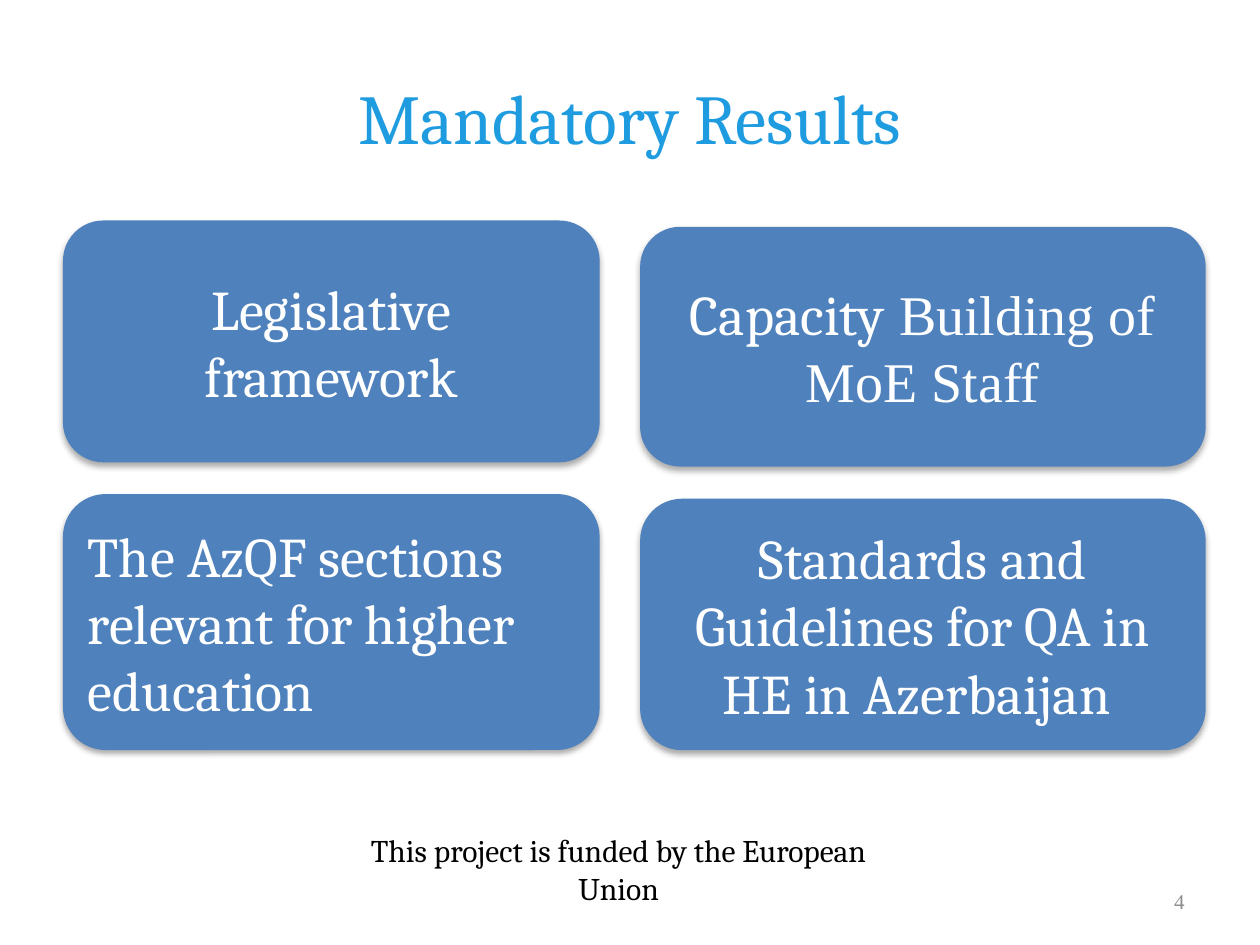
"""Build the slide that shows the four mandatory results as rounded cards."""
from dataclasses import dataclass

from lxml.etree import SubElement
from pptx import Presentation
from pptx.dml.color import RGBColor
from pptx.enum.shapes import MSO_SHAPE
from pptx.enum.text import MSO_ANCHOR, PP_ALIGN
from pptx.oxml.ns import qn
from pptx.shapes.autoshape import Shape
from pptx.slide import Slide
from pptx.util import Pt

COLORS = {
    "title": "1F9CE0",
    "card": "4F81BD",
    "card_text": "FFFFFF",
    "footer": "000000",
    "number": "8C8C8C",
    "shadow": "000000",
}
SERIF = "Cambria"
TIMES = "Times New Roman"


@dataclass(frozen=True)
class Block:
    left: float
    top: float
    width: float
    height: float
    spans: tuple[tuple[str, str], ...]
    size: float
    color: str
    align: PP_ALIGN = PP_ALIGN.CENTER
    anchor: MSO_ANCHOR = MSO_ANCHOR.MIDDLE
    wrap: bool = True


def card(left: float, top: float, width: float, height: float,
         *spans: tuple[str, str], align: PP_ALIGN = PP_ALIGN.CENTER) -> Block:
    return Block(left, top, width, height, spans, 32, "card_text", align)


LEFT_COLUMN, LEFT_WIDTH = 36, 306.7
RIGHT_COLUMN, RIGHT_WIDTH = 365.8, 323.2

CARDS = (
    card(LEFT_COLUMN, 126, LEFT_WIDTH, 138.2, ("Legislative framework", SERIF)),
    card(RIGHT_COLUMN, 129.6, RIGHT_WIDTH, 137,
         ("Capacity", SERIF), (" Building of MoE Staff", TIMES)),
    card(LEFT_COLUMN, 282.3, LEFT_WIDTH, 146.3,
         ("The AzQF sections relevant for higher education", SERIF),
         align=PP_ALIGN.LEFT),
    card(RIGHT_COLUMN, 285, RIGHT_WIDTH, 143.7,
         ("Standards and Guidelines for QA in HE in Azerbaijan ", SERIF)),
)
LABELS = (
    Block(36, 21.6, 648, 90, (("Mandatory Results", SERIF),), 40, "title"),
    Block(516, 500.5, 168, 28.8, (("4", TIMES),), 12, "number", PP_ALIGN.RIGHT),
    Block(180, 471.6, 347, 28.8,
          (("This project is funded by the European Union", SERIF),), 18,
          "footer", anchor=MSO_ANCHOR.TOP, wrap=False),
)


def write_text(box: Shape, block: Block) -> None:
    frame = box.text_frame
    frame.word_wrap = block.wrap
    frame.vertical_anchor = block.anchor
    para = frame.paragraphs[0]
    para.alignment = block.align
    para.font.size = Pt(block.size)
    para.font.color.rgb = RGBColor.from_string(COLORS[block.color])
    if len(block.spans) == 1:
        para.font.name = block.spans[0][1]
    for text, font in block.spans:
        span = para.add_run()
        span.text = text
        if len(block.spans) > 1:
            span.font.name = font
        span.font.color.rgb = RGBColor.from_string(COLORS[block.color])


def add_soft_shadow(box: Shape) -> None:
    box.shadow.inherit = False
    effects = box.element.spPr.find(qn("a:effectLst"))
    shadow = SubElement(effects, qn("a:outerShdw"), blurRad=str(int(Pt(3.5))),
                        dist=str(int(Pt(2.2))), dir="5400000", rotWithShape="0")
    color = SubElement(shadow, qn("a:srgbClr"), val=COLORS["shadow"])
    SubElement(color, qn("a:alpha"), val="32000")


def frame_of(block: Block) -> tuple[Pt, Pt, Pt, Pt]:
    return Pt(block.left), Pt(block.top), Pt(block.width), Pt(block.height)


def draw_card(page: Slide, block: Block) -> None:
    box = page.shapes.add_shape(MSO_SHAPE.ROUNDED_RECTANGLE, *frame_of(block))
    box.fill.solid()
    box.fill.fore_color.rgb = RGBColor.from_string(COLORS["card"])
    box.line.fill.background()
    add_soft_shadow(box)
    write_text(box, block)


def draw_label(page: Slide, block: Block) -> None:
    write_text(page.shapes.add_textbox(*frame_of(block)), block)


def main() -> None:
    deck = Presentation()
    deck.slide_width, deck.slide_height = Pt(720), Pt(540)
    page = deck.slides.add_slide(deck.slide_layouts[6])
    for block in CARDS:
        draw_card(page, block)
    for block in LABELS:
        draw_label(page, block)
    deck.save("out.pptx")


if __name__ == "__main__":
    main()
